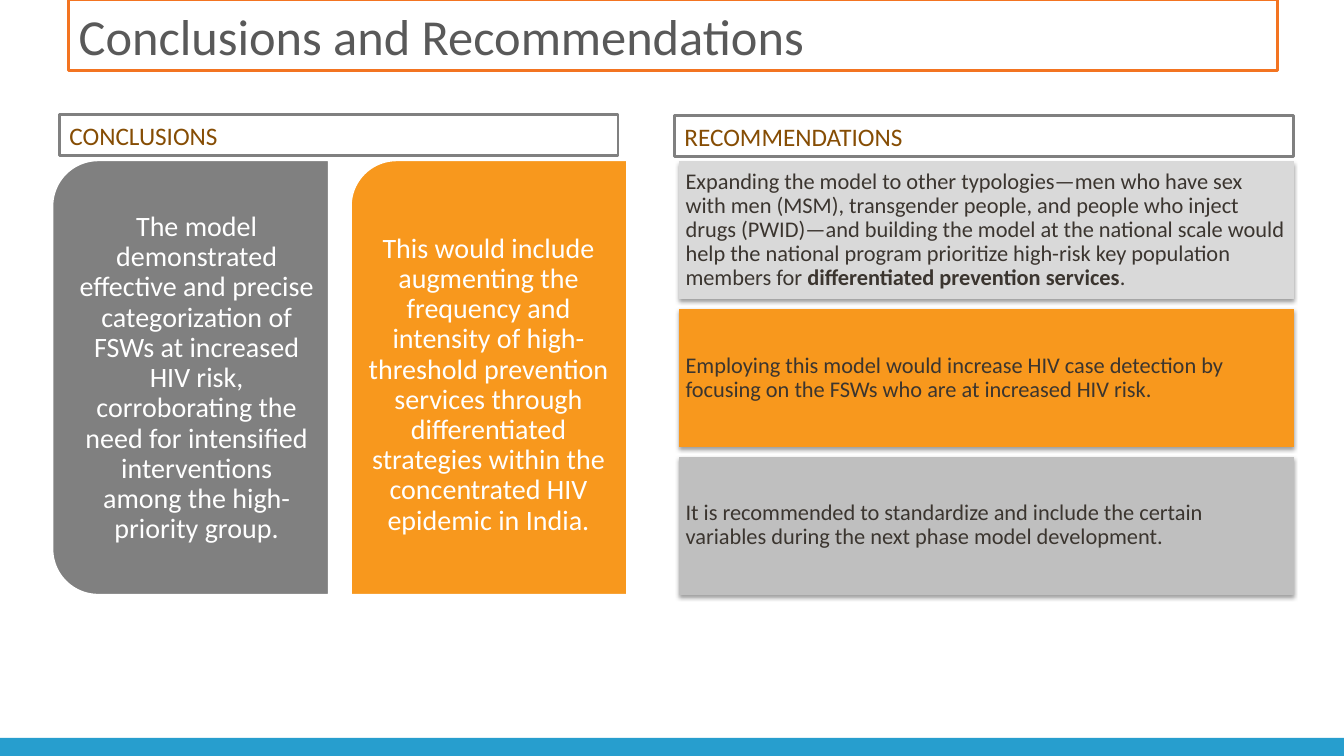
from lxml.etree import SubElement
from pptx import Presentation
from pptx.dml.color import RGBColor
from pptx.enum.shapes import MSO_SHAPE
from pptx.enum.text import MSO_ANCHOR, MSO_AUTO_SIZE, PP_ALIGN
from pptx.oxml.ns import qn
from pptx.util import Inches, Pt

HUE = {
    "white": "FFFFFF", "blue": "279ECE", "rust": "F37421", "orange": "F8981D",
    "gray": "808080", "pale": "D9D9D9", "silver": "BFBFBF",
    "title": "595959", "brown": "864D04", "ink": "3B352F",
}


def paint(shape, fill, line=None):
    shape.shadow.inherit = False
    shape.fill.solid()
    shape.fill.fore_color.rgb = RGBColor.from_string(HUE[fill])
    if line:
        shape.line.color.rgb = RGBColor.from_string(HUE[line])
        shape.line.width = Pt(2)
    else:
        shape.line.fill.background()


def write(shape, parts, size, hue, align=PP_ALIGN.LEFT, anchor=MSO_ANCHOR.MIDDLE, pitch=0.9):
    frame = shape.text_frame
    frame.word_wrap = True
    frame.auto_size = MSO_AUTO_SIZE.NONE
    frame.vertical_anchor = anchor
    para = frame.paragraphs[0]
    para.alignment = align
    para.line_spacing = pitch
    para.font.name = "Calibri"
    para.font.size = Pt(size)
    para.font.color.rgb = RGBColor.from_string(HUE[hue])
    for text, bold in parts:
        run = para.add_run()
        run.text = text
        if bold:
            run.font.bold = True
    return frame


deck = Presentation()
deck.slide_width, deck.slide_height = Inches(13.33), Inches(7.5)
slide = deck.slides.add_slide(deck.slide_layouts[5])
shapes = slide.shapes

bar = shapes.add_shape(MSO_SHAPE.RECTANGLE, 0, Inches(7.32), deck.slide_width, Inches(0.18))
paint(bar, "blue")

title = shapes.title
title.left, title.top = Inches(0.68), 0
title.width, title.height = Inches(11.99), Inches(0.7)
title.fill.solid()
title.fill.fore_color.rgb = RGBColor.from_string(HUE["white"])
title.line.color.rgb = RGBColor.from_string(HUE["rust"])
title.line.width = Pt(2)
write(title, [("Conclusions and Recommendations", False)], 36, "title", pitch=1)

LONG, WIDE, MID = 4.32, 2.75, 3.745
panels = [
    (MSO_SHAPE.ROUND_2_SAME_RECTANGLE, "gray", 0.64, 2.62, 4.05,
     "The model demonstrated effective and precise categorization of FSWs at increased HIV risk, "
     "corroborating the need for intensified interventions among the high-priority group."),
    (MSO_SHAPE.ROUND_1_RECTANGLE, "orange", 3.47, 2.75, 4.18,
     "This would include augmenting the frequency and intensity of high-threshold prevention "
     "services through differentiated strategies within the concentrated HIV epidemic in India."),
]
for col, (kind, fill, left, width, height, text) in enumerate(panels):
    mid = 1.89 + col * 2.96
    panel = shapes.add_shape(kind, Inches(mid - LONG / 2), Inches(MID - WIDE / 2),
                             Inches(LONG), Inches(WIDE))
    panel.rotation = 270
    paint(panel, fill, "white")
    box = shapes.add_textbox(Inches(left), Inches(1.73), Inches(width), Inches(height))
    frame = write(box, [(text, False)], 20, "white", PP_ALIGN.CENTER)
    frame.margin_left = frame.margin_right = Inches(0.14)
    frame.margin_top = frame.margin_bottom = 0

cards = [
    ("pale", [
        ("Expanding the model to other typologies—men who have sex with men (MSM), transgender "
         "people, and people who inject drugs (PWID)—and building the model at the national scale "
         "would help the national program prioritize high-risk key population members for ", False),
        ("differentiated prevention services", True),
        (".", False)]),
    ("orange", [
        ("Employing this model would increase HIV case detection by focusing on the FSWs who are "
         "at increased HIV risk.", False)]),
    ("silver", [
        ("It is recommended to standardize and include the certain variables during the next "
         "phase model development.", False)]),
]
for row, (fill, parts) in enumerate(cards):
    card = shapes.add_shape(MSO_SHAPE.FLOWCHART_PROCESS, Inches(6.73), Inches(1.6 + row * 1.465),
                            Inches(6.1), Inches(1.37))
    paint(card, fill)
    effect = card._element.spPr.find(qn("a:effectLst"))
    shade = SubElement(effect, qn("a:outerShdw"), blurRad=str(Pt(3.1)), dist=str(Pt(1.6)),
                       dir="5400000", rotWithShape="0")
    black = SubElement(shade, qn("a:srgbClr"), val="000000")
    SubElement(black, qn("a:alpha"), val="38000")
    frame = write(card, parts, 16, "ink")
    frame.margin_left = frame.margin_right = Inches(0.07)
    frame.margin_top = frame.margin_bottom = Inches(0.07)

heads = [("CONCLUSIONS", 0.59, 1.14, 5.54), ("RECOMMENDATIONS", 6.69, 1.15, 6.14)]
for text, left, top, width in heads:
    head = shapes.add_shape(MSO_SHAPE.RECTANGLE, Inches(left), Inches(top), Inches(width), Inches(0.4))
    paint(head, "white", "gray")
    frame = write(head, [(text, False)], 18, "brown", anchor=MSO_ANCHOR.TOP, pitch=1)
    frame.auto_size = MSO_AUTO_SIZE.SHAPE_TO_FIT_TEXT

deck.save("out.pptx")
